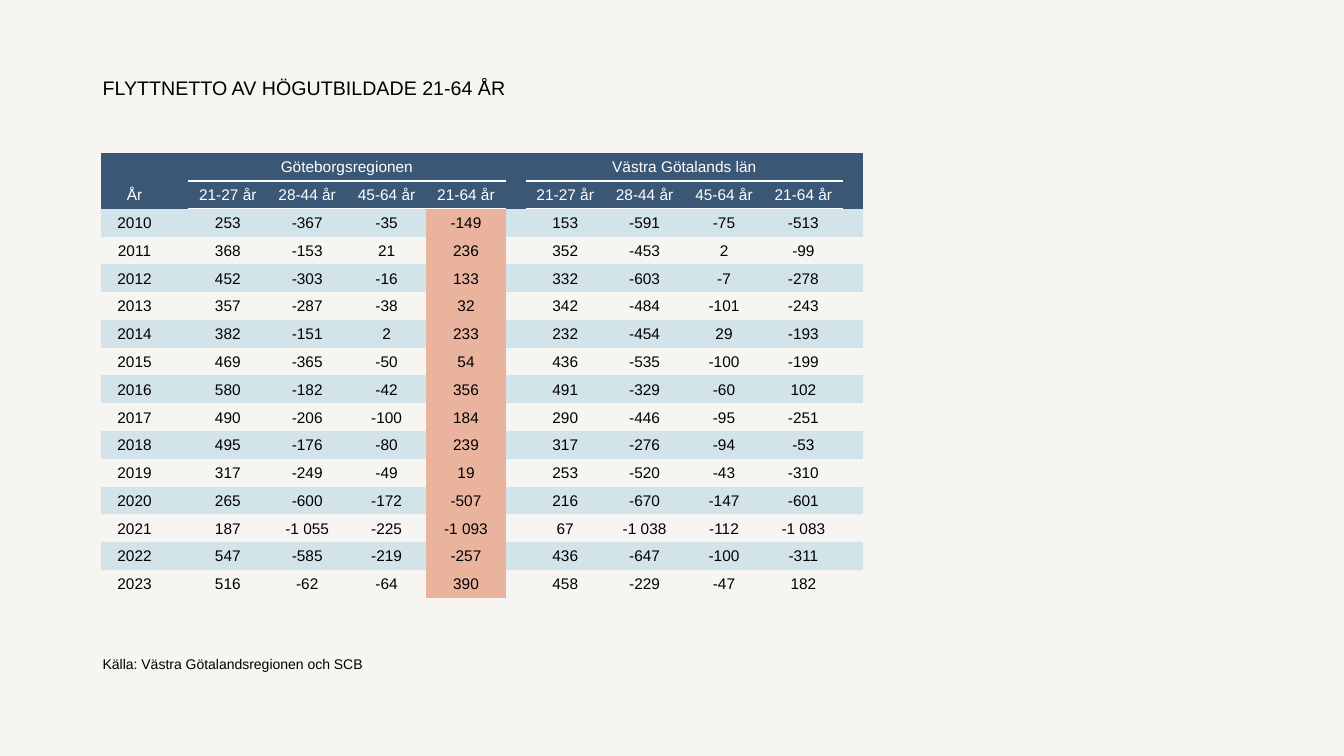
import pptx
import pptx.util
import pptx.dml.color
import pptx.enum.text
import pptx.oxml

Inches, Pt = pptx.util.Inches, pptx.util.Pt
Align, Anchor = pptx.enum.text.PP_ALIGN, pptx.enum.text.MSO_ANCHOR
NAVY, PALE, CORAL, PAPER = "3B5776", "D2E3EA", "EAB39E", "F6F5F1"
WHITE, BLACK = "FFFFFF", "000000"
NS = 'xmlns:a="http://schemas.openxmlformats.org/drawingml/2006/main"'
PLAIN = "{2D5ABB26-0587-4C30-8999-92F81FD0307C}"

AGES = "21-27 år,28-44 år,45-64 år,21-64 år"
DATA = f"""År,{AGES},{AGES}
2010,253,-367,-35,-149,153,-591,-75,-513
2011,368,-153,21,236,352,-453,2,-99
2012,452,-303,-16,133,332,-603,-7,-278
2013,357,-287,-38,32,342,-484,-101,-243
2014,382,-151,2,233,232,-454,29,-193
2015,469,-365,-50,54,436,-535,-100,-199
2016,580,-182,-42,356,491,-329,-60,102
2017,490,-206,-100,184,290,-446,-95,-251
2018,495,-176,-80,239,317,-276,-94,-53
2019,317,-249,-49,19,253,-520,-43,-310
2020,265,-600,-172,-507,216,-670,-147,-601
2021,187,-1 055,-225,-1 093,67,-1 038,-112,-1 083
2022,547,-585,-219,-257,436,-647,-100,-311
2023,516,-62,-64,390,458,-229,-47,182"""
REGIONS = {2: "Göteborgsregionen", 7: "Västra Götalands län"}


def color(code):
    return pptx.dml.color.RGBColor.from_string(code)


def write(para, text, size, code):
    run = para.add_run()
    run.text = text
    for name, value in {"name": "Arial", "size": Pt(size)}.items():
        setattr(run.font, name, value)
    run.font.color.rgb = color(code)


deck = pptx.Presentation()
deck.slide_width, deck.slide_height = Inches(13.33), Inches(7.5)
slide = deck.slides.add_slide(deck.slide_layouts[6])
slide.background.fill.solid()
slide.background.fill.fore_color.rgb = color(PAPER)

# Title and source line
for text, top, width, height, size, anchor in [
    ("FLYTTNETTO AV HÖGUTBILDADE 21-64 ÅR", 0.7, 9.76, 0.51, 14, Anchor.TOP),
    ("Källa: Västra Götalandsregionen och SCB", 6.45, 10.79, 0.27, 10, Anchor.BOTTOM),
]:
    box = slide.shapes.add_textbox(Inches(0.92), Inches(top), Inches(width), Inches(height))
    frame = box.text_frame
    frame.word_wrap, frame.vertical_anchor = True, anchor
    write(frame.paragraphs[0], text, size, BLACK)

# Column widths in units: year, then a gap before and after each region
units = [3.4] + ([1] + [4] * 4) * 2 + [1]
slots = [col for col, unit in enumerate(units) if unit > 1]
lines = [dict(zip(slots, line.split(","))) for line in DATA.split("\n")]
grid = [REGIONS] + lines
wide, high = Inches(7.56), Inches(4.41)

shape = slide.shapes.add_table(len(grid), len(units), Inches(1), Inches(1.52), wide, high)
table = shape.table
table.first_row = table.horz_banding = False
table._tbl.tblPr[0].text = PLAIN
for col, unit in zip(table.columns, units):
    col.width = int(wide * unit / sum(units))
for row in table.rows:
    row.height = int(high / len(grid))
for start in REGIONS:
    table.cell(0, start).merge(table.cell(0, start + 3))

margins = {"margin_left": 0.01, "margin_right": 0.01, "margin_top": 0.01, "margin_bottom": 0}
for r, texts in enumerate(grid):
    head = r < 2
    for c in range(len(units)):
        cell = table.cell(r, c)
        cell.vertical_anchor = Anchor.MIDDLE
        for name, value in margins.items():
            setattr(cell, name, Inches(value))
        fill = NAVY if head else CORAL if c == 5 else PALE if r % 2 == 0 else None
        if fill:
            cell.fill.solid()
            cell.fill.fore_color.rgb = color(fill)
        else:
            cell.fill.background()
        para = cell.text_frame.paragraphs[0]
        para.alignment = Align.CENTER
        if c in texts:
            write(para, texts[c], 11, WHITE if head else BLACK)
        else:
            # Keeps an empty cell from stretching its row
            para._p.append(pptx.oxml.parse_xml(f'<a:endParaRPr {NS} sz="1100"/>'))
        if head and c in slots[1:]:
            side = "lnT" if r else "lnB"
            cell._tc.get_or_add_tcPr().insert(0, pptx.oxml.parse_xml(
                f'<a:{side} {NS} w="12700"><a:solidFill><a:srgbClr val="{WHITE}"/>'
                f'</a:solidFill></a:{side}>'))

deck.save("out.pptx")
